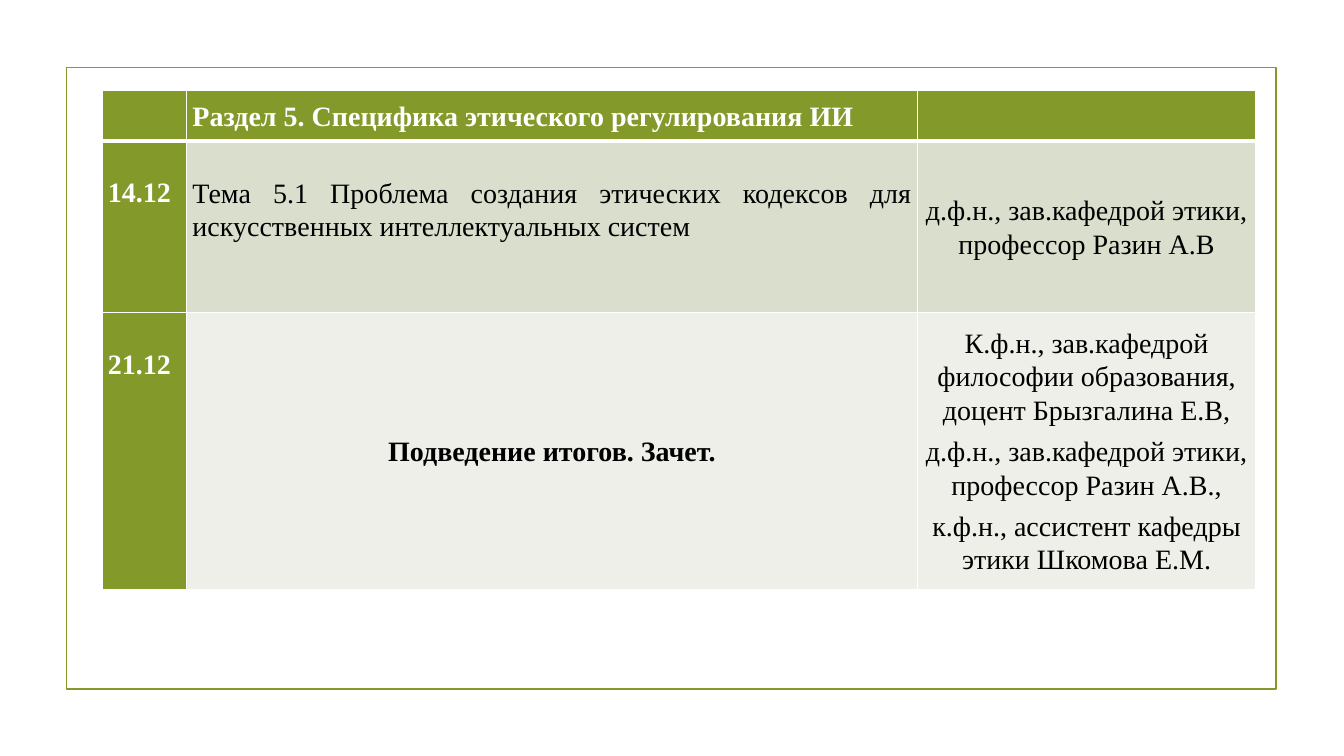
from dataclasses import dataclass

from lxml.etree import SubElement
from pptx import Presentation
from pptx.dml.color import RGBColor
from pptx.enum.shapes import MSO_SHAPE as Preset
from pptx.enum.text import MSO_ANCHOR as Anchor, PP_ALIGN as Align
from pptx.oxml.ns import qn
from pptx.util import Cm, Pt

GREEN, SAGE, MIST = "83992A", "D9DECD", "EDEFE8"
WHITE, BLACK = "FFFFFF", "000000"
COLUMN_WIDTHS = [2.13, 18.42, 8.53]
ROW_HEIGHTS = [1.27, 4.32, 6.98]
LINE_OFFSET = 0.87  # one line of text, in centimetres


@dataclass
class CellSpec:
    fill: str
    paragraphs: tuple[str, ...] = ()
    color: str = BLACK
    bold: bool = False
    align: Align = Align.JUSTIFY
    anchor: Anchor = Anchor.MIDDLE
    top: float = 0
    bottom: float = 0
    gap: float = 0


def date_cell(date: str) -> CellSpec:
    return CellSpec(GREEN, (date,), WHITE, True, anchor=Anchor.TOP, top=LINE_OFFSET)


def lecturer_cell(fill: str, *lecturers: str) -> CellSpec:
    return CellSpec(fill, lecturers, align=Align.CENTER, gap=3)


SCHEDULE = [
    [
        CellSpec(GREEN),
        CellSpec(GREEN, ("Раздел 5. Специфика этического регулирования ИИ",), WHITE, True),
        CellSpec(GREEN),
    ],
    [
        date_cell("14.12"),
        CellSpec(SAGE, ("Тема 5.1 Проблема создания этических кодексов для "
                        "искусственных интеллектуальных систем",), bottom=LINE_OFFSET),
        lecturer_cell(SAGE, "д.ф.н., зав.кафедрой этики, профессор Разин А.В"),
    ],
    [
        date_cell("21.12"),
        CellSpec(MIST, ("Подведение итогов. Зачет.",), bold=True, align=Align.CENTER),
        lecturer_cell(
            MIST,
            "К.ф.н., зав.кафедрой философии образования, доцент Брызгалина Е.В,",
            "д.ф.н., зав.кафедрой этики, профессор Разин А.В.,",
            "к.ф.н., ассистент кафедры этики Шкомова Е.М.",
        ),
    ],
]


def rgb(color: str) -> RGBColor:
    return RGBColor.from_string(color)


def set_borders(cell, top: float, bottom: float) -> None:
    properties = cell._tc.get_or_add_tcPr()
    for side, width in (("L", 1), ("R", 1), ("T", top), ("B", bottom)):
        line = SubElement(properties, qn(f"a:ln{side}"), w=str(Pt(width)))
        fill = SubElement(line, qn("a:solidFill"))
        SubElement(fill, qn("a:srgbClr"), val=WHITE)


def fill_cell(cell, spec: CellSpec) -> None:
    cell.fill.solid()
    cell.fill.fore_color.rgb = rgb(spec.fill)
    cell.margin_left = cell.margin_right = Cm(0.15)
    cell.margin_top, cell.margin_bottom = Cm(spec.top), Cm(spec.bottom)
    cell.vertical_anchor = spec.anchor
    cell.text_frame.text = "\n".join(spec.paragraphs)
    for index, paragraph in enumerate(cell.text_frame.paragraphs):
        paragraph.alignment = spec.align
        paragraph.line_spacing = 1.07
        paragraph.space_before = Pt(spec.gap if index else 0)
        paragraph.space_after = Pt(spec.gap)
        font = paragraph.font
        font.name, font.size, font.bold = "Times New Roman", Pt(20), spec.bold
        font.color.rgb = rgb(spec.color)


def add_frame(slide) -> None:
    frame = slide.shapes.add_shape(Preset.RECTANGLE, Cm(1.68), Cm(1.7), Cm(30.48), Cm(15.67))
    frame.shadow.inherit = False
    frame.fill.background()
    frame.line.color.rgb = rgb(GREEN)
    frame.line.width = Pt(1.25)


def add_schedule(slide) -> None:
    table = slide.shapes.add_table(
        len(ROW_HEIGHTS), len(COLUMN_WIDTHS), Cm(2.57), Cm(2.29),
        Cm(sum(COLUMN_WIDTHS)), Cm(sum(ROW_HEIGHTS)),
    ).table
    for column, width in zip(table.columns, COLUMN_WIDTHS):
        column.width = Cm(width)
    for row, height in zip(table.rows, ROW_HEIGHTS):
        row.height = Cm(height)
    for row_index, specs in enumerate(SCHEDULE):
        for column_index, spec in enumerate(specs):
            cell = table.cell(row_index, column_index)
            # The rule under the header row is thicker
            set_borders(cell, 3 if row_index == 1 else 1, 3 if row_index == 0 else 1)
            fill_cell(cell, spec)


def main() -> None:
    presentation = Presentation()
    presentation.slide_width, presentation.slide_height = Cm(33.87), Cm(19.05)
    slide = presentation.slides.add_slide(presentation.slide_layouts[6])
    add_frame(slide)
    add_schedule(slide)
    presentation.save("out.pptx")


if __name__ == "__main__":
    main()
